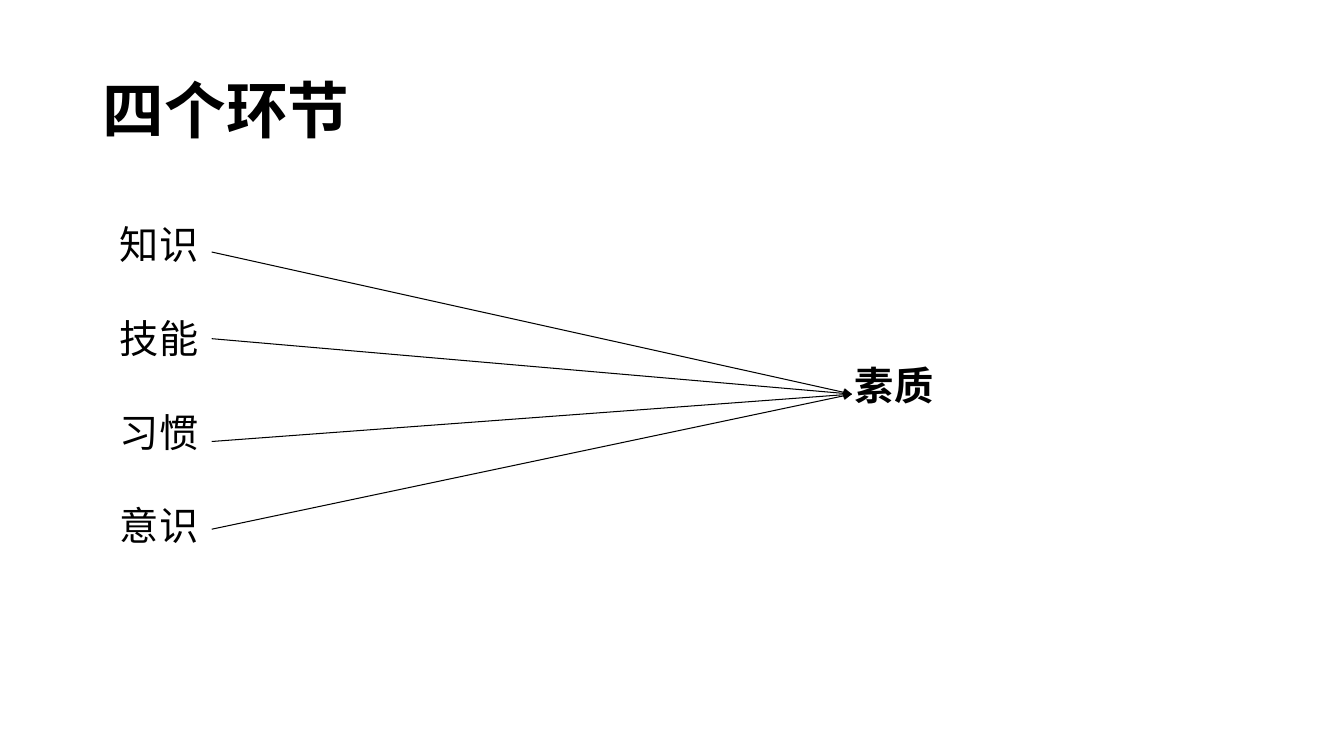
from dataclasses import dataclass

import pptx
import pptx.dml.color
import pptx.enum.shapes
import pptx.enum.text
import pptx.oxml.ns
import pptx.util
from lxml import etree
from pptx.util import Inches


@dataclass(frozen=True)
class Theme:
    font: str = "Noto Sans CJK SC"
    ink: str = "000000"
    paper: str = "FFFFFF"
    title_size: int = 44
    label_size: int = 28
    line_width: float = 0.75


class SlideBuilder:
    def __init__(self, slide, theme):
        self.slide = slide
        self.theme = theme
        background = slide.background.fill
        background.solid()
        background.fore_color.rgb = self.color(theme.paper)

    def color(self, value):
        return pptx.dml.color.RGBColor.from_string(value)

    def set_text(self, frame, wording, size, bold):
        """Fill a text frame with one left-aligned, vertically centred run."""
        frame.word_wrap = True
        frame.auto_size = pptx.enum.text.MSO_AUTO_SIZE.NONE
        frame.vertical_anchor = pptx.enum.text.MSO_ANCHOR.MIDDLE
        paragraph = frame.paragraphs[0]
        paragraph.alignment = pptx.enum.text.PP_ALIGN.LEFT
        run = paragraph.add_run()
        run.text = wording
        font = run.font
        font.name = self.theme.font
        font.size = pptx.util.Pt(size)
        font.bold = bold
        font.color.rgb = self.color(self.theme.ink)
        east_asian = etree.Element(pptx.oxml.ns.qn("a:ea"), typeface=self.theme.font)
        font._element.find(pptx.oxml.ns.qn("a:latin")).addnext(east_asian)
        return paragraph

    def title(self, wording, left, top, width, height):
        heading = self.slide.shapes.title
        heading.left, heading.top = Inches(left), Inches(top)
        heading.width, heading.height = Inches(width), Inches(height)
        paragraph = self.set_text(
            heading.text_frame, wording, self.theme.title_size, True
        )
        paragraph.line_spacing = 0.9

    def label(self, wording, left, middle, bold=False):
        width, height = 0.85, 0.6
        box = self.slide.shapes.add_textbox(
            Inches(left), Inches(middle - height / 2), Inches(width), Inches(height)
        )
        frame = box.text_frame
        frame.margin_left = frame.margin_right = 0
        frame.margin_top = frame.margin_bottom = 0
        self.set_text(frame, wording, self.theme.label_size, bold)

    def arrow(self, start, end):
        arrow = self.slide.shapes.add_connector(
            pptx.enum.shapes.MSO_CONNECTOR.STRAIGHT, *map(Inches, start + end)
        )
        arrow.line.color.rgb = self.color(self.theme.ink)
        arrow.line.width = pptx.util.Pt(self.theme.line_width)
        properties = arrow._element.spPr
        outline = properties.find(pptx.oxml.ns.qn("a:ln"))
        etree.SubElement(outline, pptx.oxml.ns.qn("a:tailEnd"), type="triangle")
        etree.SubElement(properties, pptx.oxml.ns.qn("a:effectLst"))


def main():
    deck = pptx.Presentation()
    deck.slide_width, deck.slide_height = Inches(13.33), Inches(7.5)
    title_only = deck.slide_layouts[5]
    builder = SlideBuilder(deck.slides.add_slide(title_only), Theme())

    builder.title("四个环节", 0.92, 0.4, 11.5, 1.45)

    first_middle, pitch = 2.42, 0.93
    arrow_start, arrow_target = 2.1, (8.45, 3.91)
    links = [("知识", 2.5), ("技能", 3.36), ("习惯", 4.38), ("意识", 5.25)]
    for row, (link, arrow_top) in enumerate(links):
        builder.label(link, 1.19, first_middle + row * pitch)
        builder.arrow((arrow_start, arrow_top), arrow_target)
    builder.label("素质", 8.48, 3.82, bold=True)

    deck.save("out.pptx")


if __name__ == "__main__":
    main()
